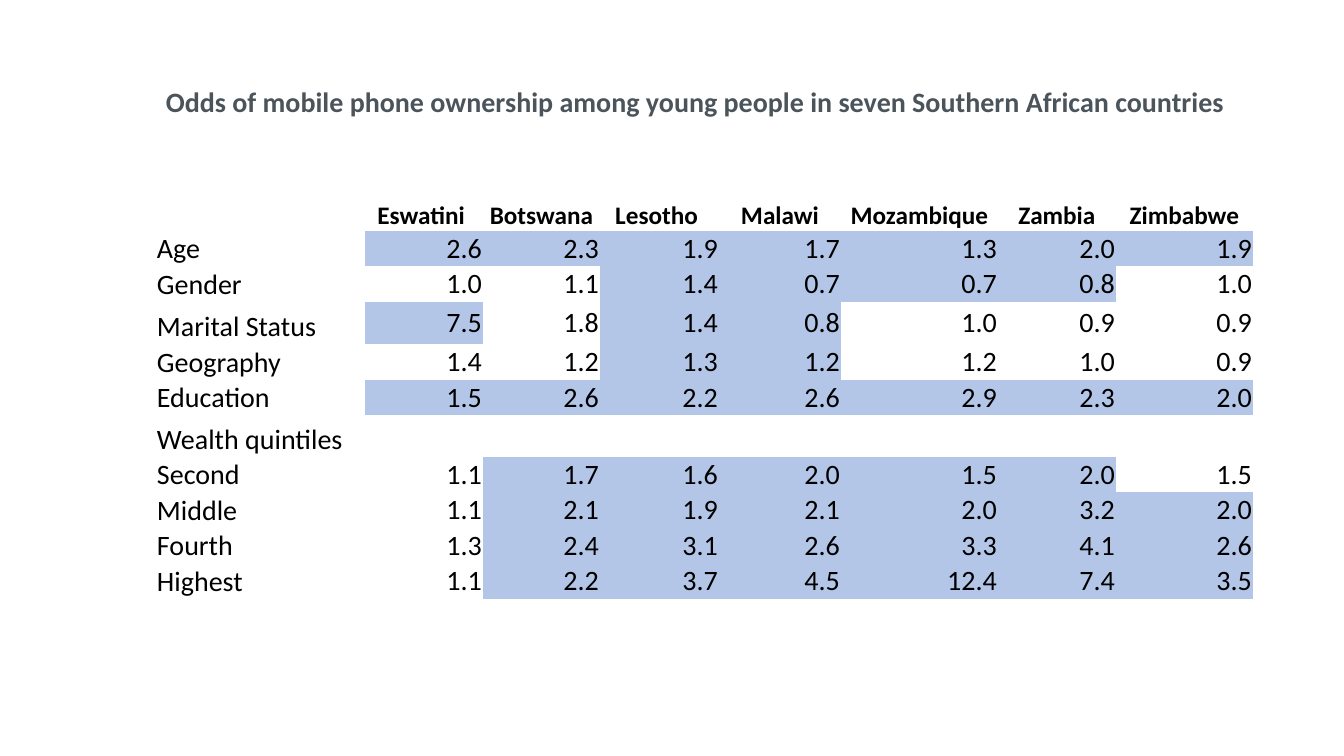
from pptx import Presentation
from pptx.dml.color import RGBColor
from pptx.enum.text import MSO_ANCHOR as ANCHOR, PP_ALIGN as ALIGN
from pptx.oxml.ns import qn
from pptx.util import Emu, Pt

EMU_PER_PX = 914400 / 100.8
FONT = "Calibri"
NO_STYLE_NO_GRID = "{2D5ABB26-0587-4C30-8999-92F81FD0307C}"

TITLE = ("Odds of mobile phone ownership among young people "
         "in seven Southern African countries")
COUNTRIES = ["Eswatini ", "Botswana", "Lesotho ", "Malawi",
             "Mozambique", "Zambia", "Zimbabwe"]
# Row label, row height in px, odds by country; * marks a shaded cell
ODDS = [
    ("Age", 35, "2.6* 2.3* 1.9* 1.7* 1.3* 2.0* 1.9*"),
    ("Gender", 36, "1.0 1.1 1.4* 0.7* 0.7* 0.8* 1.0"),
    ("Marital Status", 42, "7.5* 1.8 1.4* 0.8* 1.0 0.9 0.9"),
    ("Geography", 36, "1.4 1.2 1.3* 1.2* 1.2 1.0 0.9"),
    ("Education", 35, "1.5* 2.6* 2.2* 2.6* 2.9* 2.3* 2.0*"),
    ("Wealth quintiles", 42, ""),
    ("Second", 35, "1.1 1.7* 1.6* 2.0* 1.5* 2.0* 1.5"),
    ("Middle", 36, "1.1 2.1* 1.9* 2.1* 2.0* 3.2* 2.0*"),
    ("Fourth", 35, "1.3 2.4* 3.1* 2.6* 3.3* 4.1* 2.6*"),
    ("Highest", 36, "1.1 2.2* 3.7* 4.5* 12.4* 7.4* 3.5*"),
]
HEADER_HEIGHT = 68
COL_WIDTHS = [209, 118, 117, 119, 122, 157, 118, 137]


def px(n):
    return Emu(round(n * EMU_PER_PX))


def rgb(color):
    return RGBColor.from_string(color)


def write(p, text, size, color, bold=False, align=ALIGN.LEFT):
    p.text = text
    p.alignment = align
    p.font.name = FONT
    p.font.size = Pt(size)
    p.font.bold = bold
    p.font.color.rgb = rgb(color)


def add_title(slide, x, y, w, h):
    tf = slide.shapes.add_textbox(px(x), px(y), px(w), px(h)).text_frame
    tf.word_wrap = True
    tf.vertical_anchor = ANCHOR.TOP
    write(tf.paragraphs[0], TITLE, 20, "4B545B", bold=True)


def fill_cell(cell, text, anchor, align, size=20, bold=False):
    cell.margin_left = cell.margin_right = cell.margin_top = px(1)
    cell.margin_bottom = 0
    cell.vertical_anchor = anchor
    write(cell.text_frame.paragraphs[0], text, size, "000000", bold, align)


def add_odds_table(slide, x, y, w, h):
    frame = slide.shapes.add_table(len(ODDS) + 1, len(COL_WIDTHS),
                                   px(x), px(y), px(w), px(h))
    table = frame.table
    table.first_row = table.horz_banding = False
    frame._element.find(".//" + qn("a:tableStyleId")).text = NO_STYLE_NO_GRID

    for column, width in zip(table.columns, COL_WIDTHS):
        column.width = px(width)
    heights = [HEADER_HEIGHT] + [height for _, height, _ in ODDS]
    for row, height in zip(table.rows, heights):
        row.height = px(height)
    for cell in table.iter_cells():
        cell.fill.background()

    for c, country in enumerate(COUNTRIES, 1):
        fill_cell(table.cell(0, c), country, ANCHOR.BOTTOM, ALIGN.CENTER,
                  size=18, bold=True)
    for r, (label, _, odds) in enumerate(ODDS, 1):
        fill_cell(table.cell(r, 0), label, ANCHOR.BOTTOM, ALIGN.LEFT)
        for c, value in enumerate(odds.split(), 1):
            cell = table.cell(r, c)
            fill_cell(cell, value.rstrip("*"), ANCHOR.MIDDLE, ALIGN.RIGHT)
            if value.endswith("*"):
                cell.fill.solid()
                cell.fill.fore_color.rgb = rgb("B4C6E7")


def main():
    prs = Presentation()
    prs.slide_width, prs.slide_height = px(1344), px(756)
    slide = prs.slides.add_slide(prs.slide_layouts[6])
    add_title(slide, 156, 80, 1097, 62)
    add_odds_table(slide, 156, 163, 1097, 436)
    prs.save("out.pptx")


if __name__ == "__main__":
    main()
